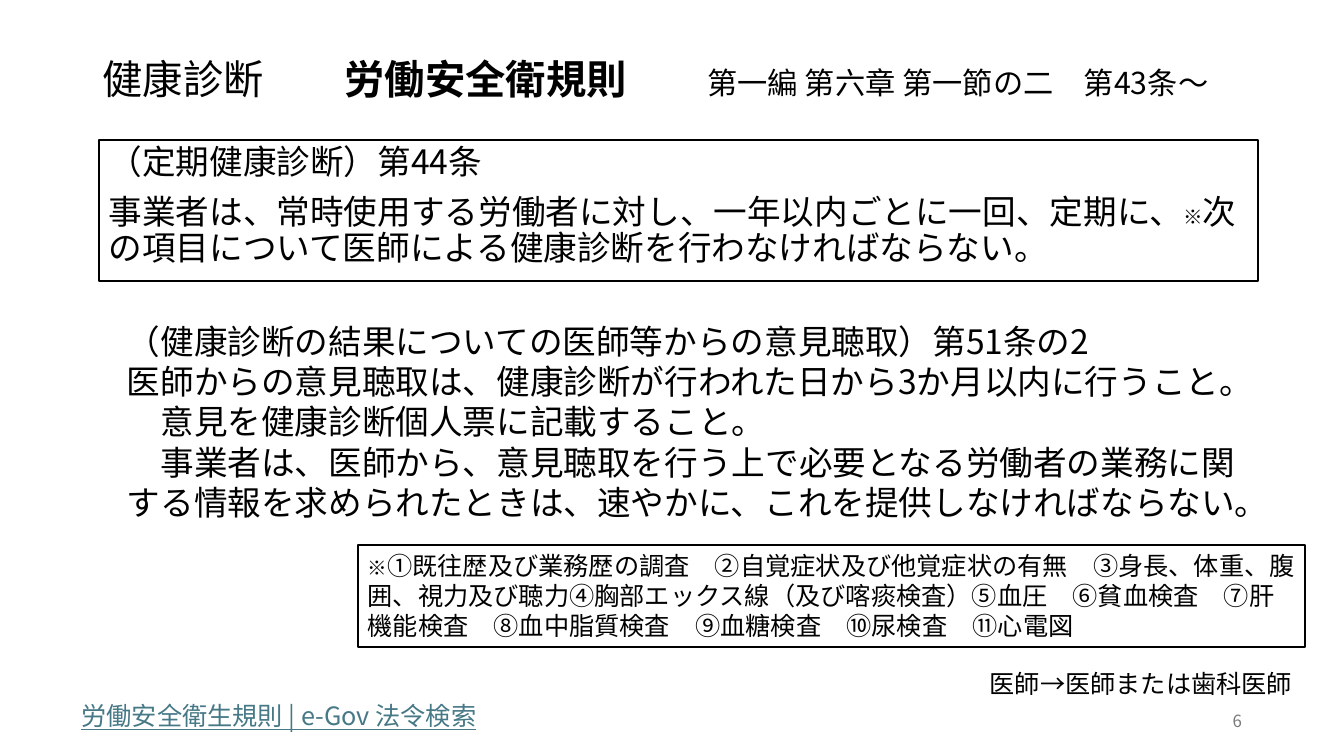
"""Build the slide on periodic health checks under the safety regulations."""
from pptx import Presentation
from pptx import util as u
from pptx.dml.color import RGBColor
from pptx.enum import shapes, text
from pptx.oxml.ns import qn

FONT = "Noto Sans CJK JP"
BLACK, WHITE, TEAL, GREY = "000000", "FFFFFF", "467886", "797979"

deck = Presentation()
deck.slide_width, deck.slide_height = u.Inches(13.33), u.Inches(7.5)
COL, ROW = deck.slide_width / 100, deck.slide_height / 100
slide = deck.slides.add_slide(deck.slide_layouts[6])


def paint(target, colour):
    target.rgb = RGBColor.from_string(colour)


def write(paragraph, runs, size, colour=BLACK):
    for words, run_size, bold in runs:
        run = paragraph.add_run()
        run.text = words
        if run_size:
            run.font.size = u.Pt(run_size)
        if bold:
            run.font.bold = True
    font = paragraph.font
    font.size, font.name = u.Pt(size), FONT
    font.fill.solid()
    paint(font.fill.fore_color, colour)
    east_asian = font._element.makeelement(qn("a:ea"), {"typeface": FONT})
    font._element.find(qn("a:latin")).addnext(east_asian)


title = slide.shapes.add_textbox(*map(int, (6.9 * COL, 5.33 * ROW, 86.25 * COL, 10.8 * ROW))).text_frame
title.word_wrap = True
title.vertical_anchor = text.MSO_ANCHOR.MIDDLE
heading = title.paragraphs[0]
heading.line_spacing = 0.9
heading_props = heading._p.get_or_add_pPr()
tab_list = heading_props.makeelement(qn("a:tabLst"), {})
heading_props.append(tab_list)
for column in (18, 45):
    stop = {"pos": str(int(column * COL)), "algn": "l"}
    tab_list.append(tab_list.makeelement(qn("a:tab"), stop))
write(heading, [("健康診断\t", None, False), ("労働安全衛規則\t", None, True),
                ("第一編 第六章 第一節の二　第43条～", 21.6, False)], 28.8)

article_44 = [
    [("（定期健康診断）第44条", None, False)],
    [("事業者は、常時使用する労働者に対し、一年以内ごとに一回、定期に、", None, False),
     ("※", 14, False),
     ("次の項目について医師による健康診断を行わなければならない。", None, False)],
]
check_items = [
    [("※", 14, False),
     ("①既往歴及び業務歴の調査　②自覚症状及び他覚症状の有無　③身長、体重、腹囲、"
      "視力及び聴力④胸部エックス線（及び喀痰検査）⑤血圧　⑥貧血検査　⑦肝機能検査　"
      "⑧血中脂質検査　⑨血糖検査　⑩尿検査　⑪心電図", None, False)],
]
framed = [
    ((7.35, 18.53, 86.25, 18.67), article_44, 24, 0.9, 10),
    ((26.62, 72.13, 70.5, 13.47), check_items, 18, 1.0, 0),
]
for (left, top, width, height), clauses, size, leading, gap in framed:
    box = slide.shapes.add_shape(shapes.MSO_SHAPE.RECTANGLE, int(left * COL), int(top * ROW),
                                 int(width * COL), int(height * ROW))
    box.shadow.inherit = False
    box.fill.solid()
    paint(box.fill.fore_color, WHITE)
    paint(box.line.color, BLACK)
    box.line.width = u.Pt(1.5)
    frame = box.text_frame
    frame.word_wrap = True
    frame.vertical_anchor = text.MSO_ANCHOR.TOP
    for index, runs in enumerate(clauses):
        clause = frame.add_paragraph() if index else frame.paragraphs[0]
        clause.alignment = text.PP_ALIGN.LEFT
        clause.line_spacing = leading
        clause.space_before = u.Pt(gap if index else 0)
        write(clause, runs, size)

opinion = slide.shapes.add_textbox(*map(int, (8.7 * COL, 41.73 * ROW, 84.9 * COL, 28.27 * ROW))).text_frame
opinion.word_wrap = True
article_51 = [
    ("（健康診断の結果についての医師等からの意見聴取）第51条の2", 0),
    ("医師からの意見聴取は、健康診断が行われた日から3か月以内に行うこと。"
     "　意見を健康診断個人票に記載すること。", 0),
    ("事業者は、医師から、意見聴取を行う上で必要となる労働者の業務に関する情報を"
     "求められたときは、速やかに、これを提供しなければならない。", 24),
]
for index, (words, indent) in enumerate(article_51):
    clause = opinion.add_paragraph() if index else opinion.paragraphs[0]
    clause._p.get_or_add_pPr().set("indent", str(u.Pt(indent)))
    write(clause, [(words, None, False)], 24)

footers = [
    ((72.9, 87.73, 24.22), "医師→医師または歯科医師", 18, BLACK, False, text.PP_ALIGN.LEFT),
    ((5.32, 92, 50), "労働安全衛生規則 | e-Gov 法令検索", 18, TEAL, True, text.PP_ALIGN.LEFT),
    ((70.65, 92.67, 22.5), "6", 12, GREY, False, text.PP_ALIGN.RIGHT),
]
for (left, top, width), words, size, colour, underlined, align in footers:
    footer = slide.shapes.add_textbox(int(left * COL), int(top * ROW), int(width * COL),
                                      int(5.33 * ROW)).text_frame
    footer.word_wrap = True
    footer.vertical_anchor = text.MSO_ANCHOR.MIDDLE
    line = footer.paragraphs[0]
    line.alignment = align
    write(line, [(words, None, False)], size, colour)
    if underlined:
        line.font.underline = True

deck.save("out.pptx")
